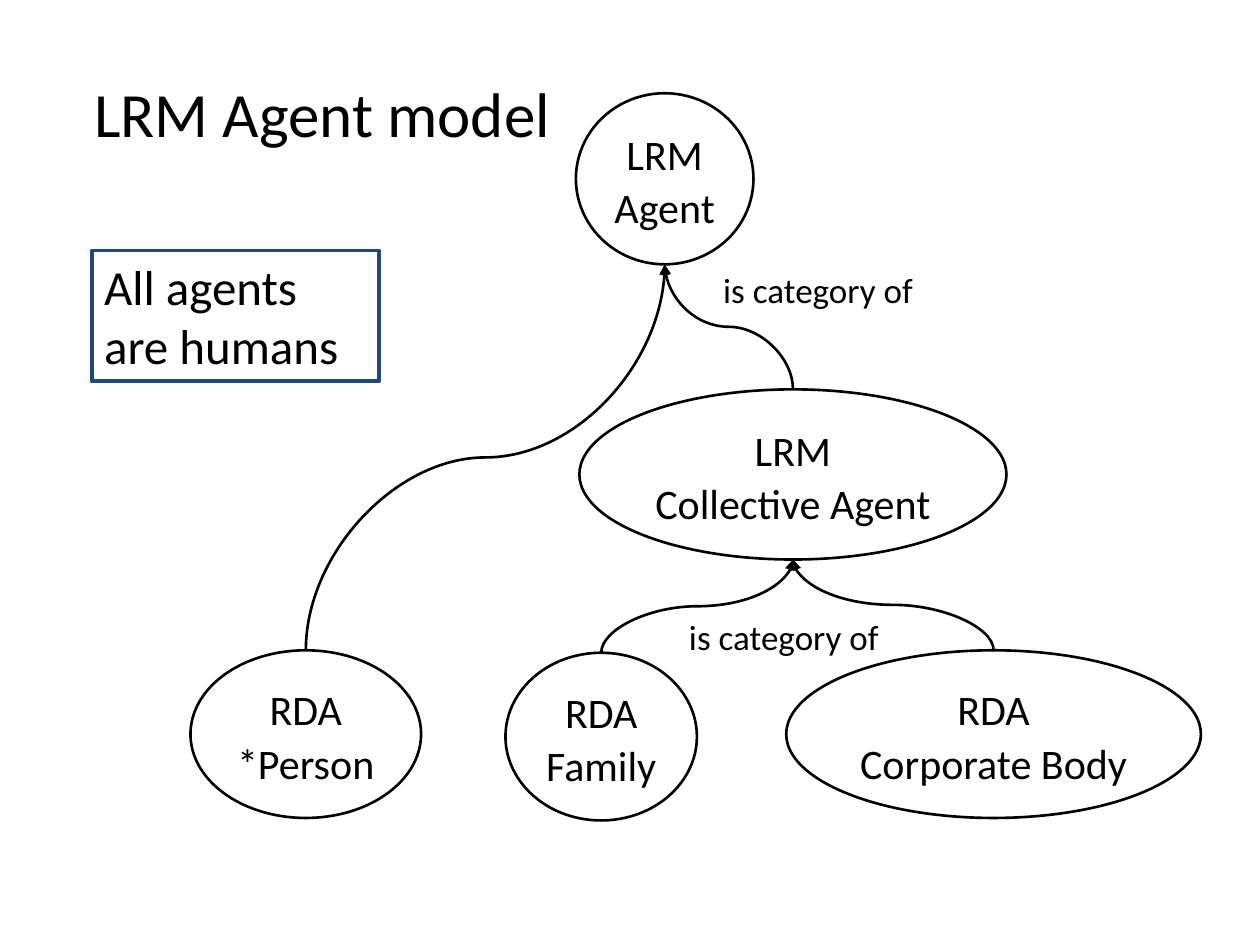
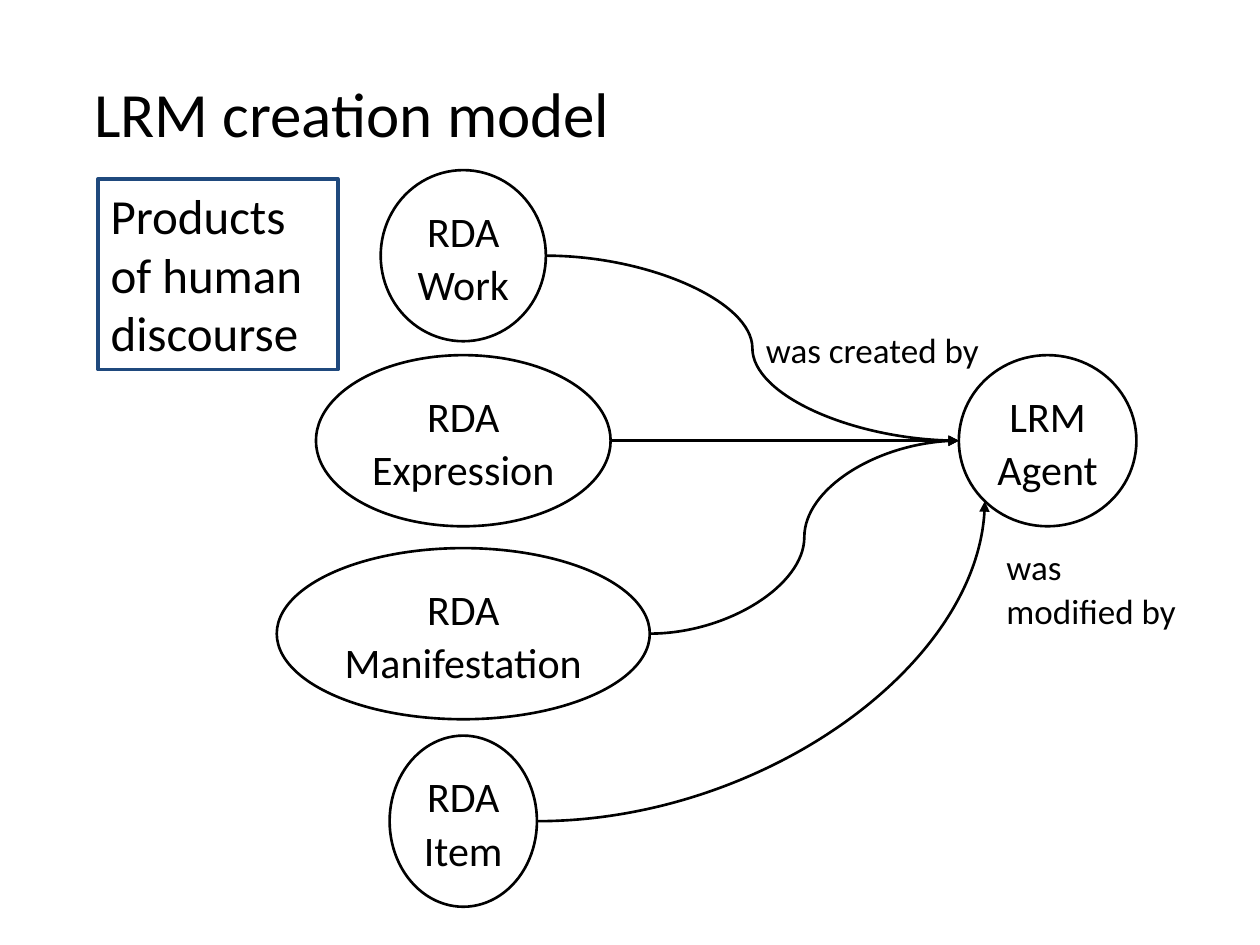
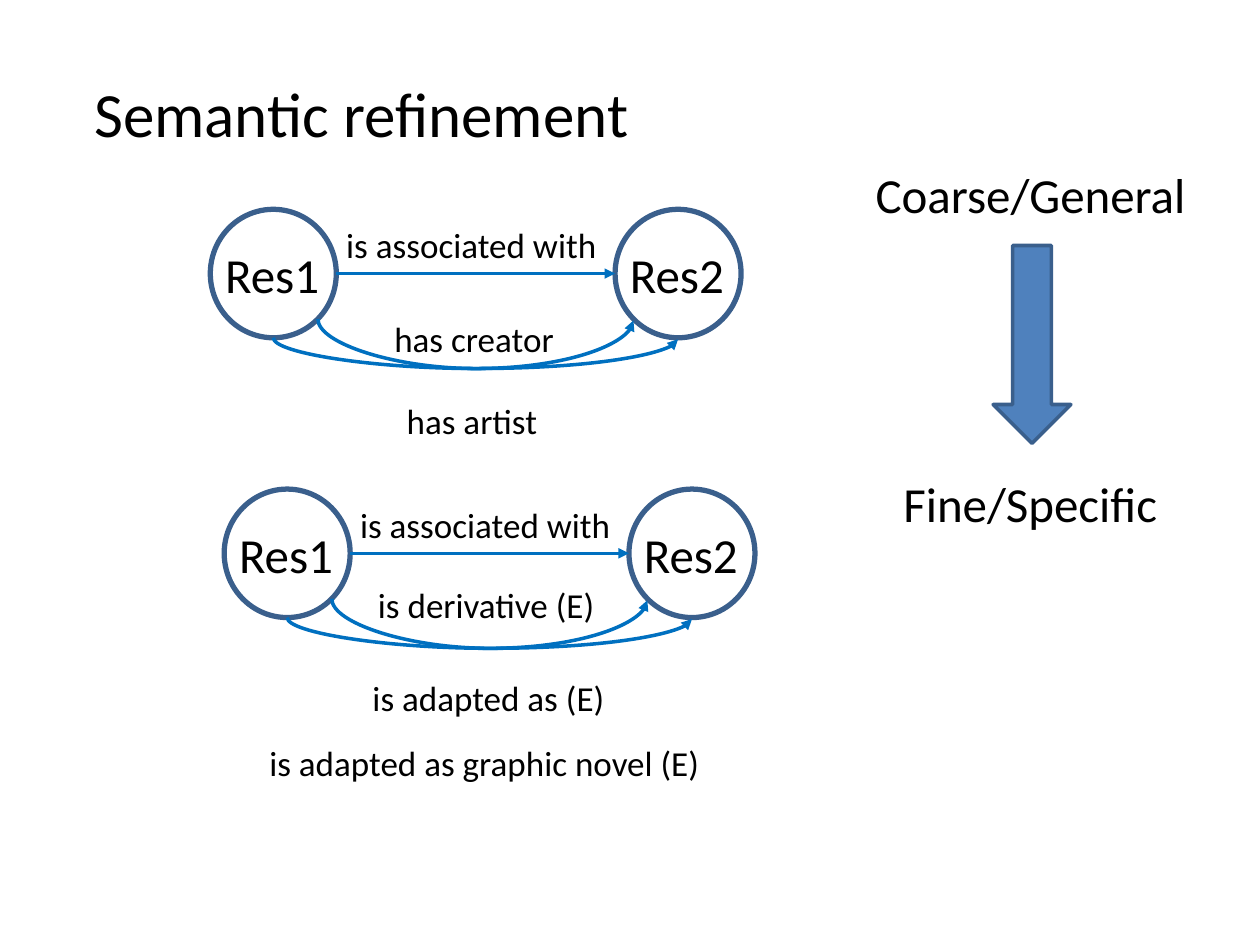
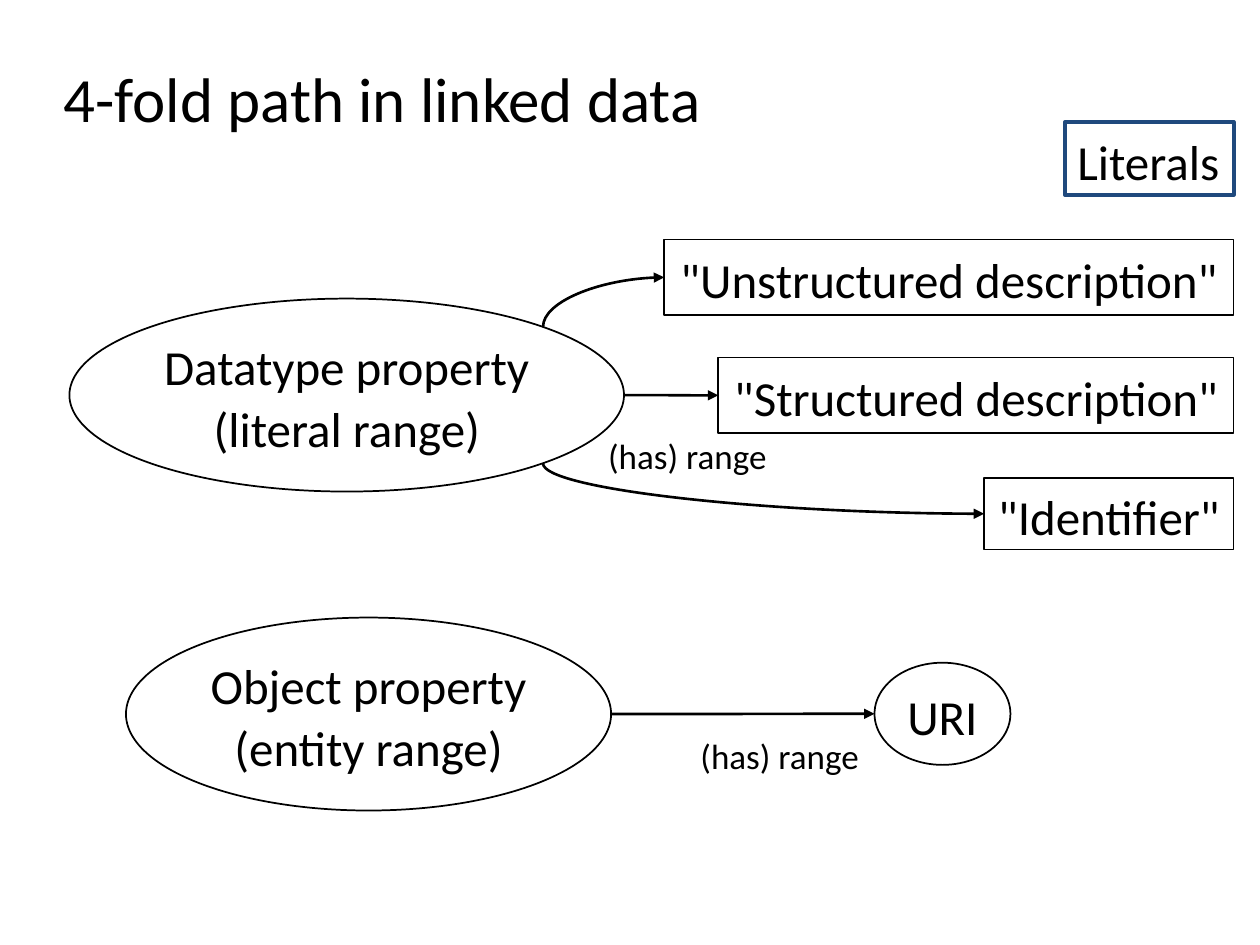
"""Build four diagram slides on agents, creation, refinement and linked data."""
from lxml.etree import SubElement
from pptx import Presentation
from pptx.dml.color import RGBColor
from pptx.enum.shapes import MSO_CONNECTOR as Line, MSO_SHAPE as Preset
from pptx.enum.text import MSO_ANCHOR as Anchor, MSO_AUTO_SIZE as AutoSize, PP_ALIGN as Align
from pptx.oxml.ns import qn
from pptx.util import Cm, Pt

COLORS = {"ink": "000000", "paper": "FFFFFF", "note": "1F497D",
          "ring": "3A5F8C", "link": "0070C0", "arrow": "4F81BD"}
FONT = "Calibri"
LEADING = 1.06
TITLE_AT = (1.65, 1.37)
TITLE_HEIGHT = 1.8
LABEL_SIZE = 20
SIDES = {"top": (0.5, 0), "left": (0, 0.5), "bottom": (0.5, 1), "right": (1, 0.5),
         "top right": (0.854, 0.146), "bottom left": (0.146, 0.854),
         "bottom right": (0.854, 0.854)}

AGENT_NODES = {
    "agent": ("LRM\nAgent", 11.61, 1.88, 3.58, 3.45),
    "collective": ("LRM\nCollective Agent", 11.68, 7.85, 8.61, 3.43),
    "person": ("RDA\n*Person", 3.84, 13.11, 4.65, 3.38),
    "family": ("RDA\nFamily", 10.19, 13.16, 3.86, 3.38),
    "corporate": ("RDA\nCorporate Body", 15.85, 13.11, 8.36, 3.38),
}
AGENT_LINKS = [
    ("collective", "top", "agent", "bottom"),
    ("corporate", "top", "collective", "bottom"),
    ("family", "top", "collective", "bottom"),
    ("person", "top", "agent", "bottom"),
]
AGENT_LABELS = [
    ("is category of", 13.64, 12.24, 4.37, 1.17),
    ("is category of", 14.33, 5.23, 4.37, 1.14),
]

PRODUCT_CENTER = 9.34
PRODUCTS = [("work", "RDA\nWork", 3.43, 3.33), ("expression", "RDA\nExpression", 7.16, 5.94),
            ("manifestation", "RDA\nManifestation", 11.05, 7.52), ("item", "RDA\nItem", 14.83, 2.97)]
CREATION_LINKS = [
    ("expression", "right", "agent", "left"),
    ("work", "right", "agent", "left"),
    ("manifestation", "right", "agent", "left"),
    ("item", "right", "agent", "bottom left"),
]
CREATION_LABELS = [
    ("was created by", 15.19, 6.45, 4.85, 1.14),
    ("was\nmodified by", 20.04, 10.82, 3.96, 2.06),
]

PAIRS = [(4.24, 4.22), (4.52, 9.86)]
RING_WIDTH, RING_HEIGHT, RING_STEP = 2.54, 2.59, 8.16
LOOP_DEPTH = 0.62
LOOP_DROP = 0.03
REFINEMENT_LABELS = [
    ("is associated with", 6.73, 4.39, 5.61, 1.12),
    ("has creator", 7.7, 6.27, 3.76, 1.12),
    ("has artist", 7.95, 7.92, 3.18, 1.12),
    ("is associated with", 7.01, 10.03, 5.61, 1.12),
    ("is derivative (E)", 7.37, 11.63, 4.93, 1.12),
    ("is adapted as (E)", 7.26, 13.51, 5.23, 1.12),
    ("is adapted as graphic novel (E)", 5.18, 14.83, 9.27, 1.12),
]
SCALE_LABELS = [
    ("Coarse/General", 17.4, 3.2, 6.83, 1.45),
    ("Fine/Specific", 17.96, 9.42, 5.69, 1.45),
]

PROPERTY_NODES = {
    "object": ("Object property\n(entity range)", 2.54, 12.45, 9.78, 3.89),
    "datatype": ("Datatype property\n(literal range)", 1.4, 6.02, 11.18, 3.89),
    "uri": ("URI", 17.63, 13.36, 2.74, 2.06),
}
LITERAL_RIGHT = 24.87
LITERALS = [("unstructured", '"Unstructured description"', 4.83, 11.48, 1.52),
            ("structured", '"Structured description"', 7.21, 10.39, 1.52),
            ("identifier", '"Identifier"', 9.63, 5.03, 1.45)]
PATH_LINKS = [
    ("datatype", "bottom right", "identifier", "left"),
    ("object", "right", "uri", "left"),
    ("datatype", "right", "structured", "left"),
    ("datatype", "top right", "unstructured", "left"),
]
PATH_LABELS = [
    ("(has) range", 13.87, 14.63, 3.73, 1.17),
    ("(has) range", 12.01, 8.59, 3.73, 1.17),
]


def color(name):
    return RGBColor.from_string(COLORS[name])


def write(box, text, size, align=Align.LEFT, leading=None, wrap=False):
    frame = box.text_frame
    frame.text = text
    frame.word_wrap = wrap
    frame.auto_size = AutoSize.SHAPE_TO_FIT_TEXT
    for para in frame.paragraphs:
        para.alignment = align
        para.line_spacing = leading
        para.font.name = FONT
        para.font.size = Pt(size)
        para.font.color.rgb = color("ink")


def add_label(shapes, label, size=LABEL_SIZE, leading=None):
    text, *place = label
    box = shapes.add_textbox(*map(Cm, place))
    write(box, text, size, leading=leading)


def add_outline(shapes, preset, place, line, width, fill=None):
    shape = shapes.add_shape(preset, *map(Cm, place))
    shape.shadow.inherit = False
    shape.line.color.rgb = color(line)
    shape.line.width = Pt(width)
    if fill:
        shape.fill.solid()
        shape.fill.fore_color.rgb = color(fill)
    else:
        shape.fill.background()
    return shape


def add_node(page, node, size=24, width=1.5, preset=Preset.OVAL):
    text, *place = node
    shape = add_outline(page.shapes, preset, place, "ink", width, "paper")
    shape.text_frame.vertical_anchor = Anchor.MIDDLE
    write(shape, text, size, Align.CENTER, LEADING)


def add_note(page, text, place, wrap=True, leading=None):
    shape = add_outline(page.shapes, Preset.RECTANGLE, place, "note", 2.25)
    shape.text_frame.vertical_anchor = Anchor.TOP
    write(shape, text, 28, wrap=wrap, leading=leading)


def site(place, side):
    left, top, width, height = place
    across, down = SIDES[side]
    return left + across * width, top + down * height


def is_upright(side):
    return side not in ("left", "right")


def add_link(page, nodes, link, line="ink", width=1.5, loop_bottom=None):
    """Draw a curved arrow that leaves and enters its nodes square to their sides."""
    source, source_side, target, target_side = link
    x1, y1 = site(nodes[source][1:], source_side)
    x2, y2 = site(nodes[target][1:], target_side)
    if loop_bottom:
        y2 += LOOP_DROP
    run, rise, turn = x2 - x1, y2 - y1, 0
    if is_upright(source_side):
        run, rise, turn = (rise, -run, 90) if rise > 0 else (-rise, run, 270)
    middle_x, middle_y = (x1 + x2) / 2, (y1 + y2) / 2
    ends = (middle_x - run / 2, middle_y - rise / 2, middle_x + run / 2, middle_y + rise / 2)
    connector = page.shapes.add_connector(Line.CURVE, *map(Cm, ends))
    connector.line.color.rgb = color(line)
    connector.line.width = Pt(width)
    props = connector._element.spPr
    if turn:
        props.find(qn("a:xfrm")).set("rot", str(turn * 60000))
    geometry = props.find(qn("a:prstGeom"))
    if is_upright(source_side) != is_upright(target_side):
        geometry.set("prst", "curvedConnector2")
    if loop_bottom:
        bend = round((loop_bottom - y1) / run * 100000)
        SubElement(geometry.find(qn("a:avLst")), qn("a:gd"), name="adj1", fmla=f"val {bend}")
    SubElement(props.find(qn("a:ln")), qn("a:tailEnd"), type="triangle")
    SubElement(props, qn("a:effectLst"))


def add_page(deck, title, width, at=TITLE_AT):
    page = deck.slides.add_slide(deck.slide_layouts[6])
    add_label(page.shapes, (title, *at, width, TITLE_HEIGHT), 36)
    return page


def build_agents(deck):
    page = add_page(deck, "LRM Agent model", 9.78)
    for node in AGENT_NODES.values():
        add_node(page, node)
    for link in AGENT_LINKS:
        add_link(page, AGENT_NODES, link)
    for label in AGENT_LABELS:
        add_label(page.shapes, label, leading=LEADING)
    add_note(page, "All agents are humans", (1.85, 5.05, 5.79, 2.64))


def build_creation(deck):
    page = add_page(deck, "LRM creation model", 11)
    nodes = {"agent": ("LRM\nAgent", 19.33, 7.16, 3.58, 3.45)}
    for name, text, top, width in PRODUCTS:
        nodes[name] = (text, PRODUCT_CENTER - width / 2, top, width, 3.45)
    for node in nodes.values():
        add_node(page, node)
    for link in CREATION_LINKS:
        add_link(page, nodes, link)
    for label in CREATION_LABELS:
        add_label(page.shapes, label, leading=LEADING)
    add_note(page, "Products of human discourse", (1.98, 3.61, 4.83, 3.84))


def build_refinement(deck):
    page = add_page(deck, "Semantic refinement", 11.38)
    for left, top in PAIRS:
        rings = {name: (name, left + index * RING_STEP, top, RING_WIDTH, RING_HEIGHT)
                 for index, name in enumerate(("Res1", "Res2"))}
        for name, *place in rings.values():
            group = page.shapes.add_group_shape()
            add_outline(group.shapes, Preset.OVAL, place, "ring", 3)
            add_label(group.shapes, (name, place[0] + 0.05, top + 0.58, 2.44, 1.45), 28)
        add_link(page, rings, ("Res1", "right", "Res2", "left"), "link", 2)
        for start, end in (("bottom right", "bottom left"), ("bottom", "bottom")):
            add_link(page, rings, ("Res1", start, "Res2", end), "link", 2,
                     top + RING_HEIGHT + LOOP_DEPTH)
    for label in REFINEMENT_LABELS:
        add_label(page.shapes, label)
    for label in SCALE_LABELS:
        add_label(page.shapes, label, 28)
    add_outline(page.shapes, Preset.DOWN_ARROW, (20.02, 4.95, 1.57, 3.99), "ring", 2, "arrow")


def build_paths(deck):
    page = add_page(deck, "4-fold path in linked data", 13.46, (1.04, 1.07))
    literals = {name: (text, LITERAL_RIGHT - width, top, width, height)
                for name, text, top, width, height in LITERALS}
    for node in PROPERTY_NODES.values():
        add_node(page, node, 28, 1)
    for node in literals.values():
        add_node(page, node, 28, 1, Preset.RECTANGLE)
    for link in PATH_LINKS:
        add_link(page, PROPERTY_NODES | literals, link)
    for label in PATH_LABELS:
        add_label(page.shapes, label, leading=LEADING)
    add_note(page, "Literals", (LITERAL_RIGHT - 3.4, 2.46, 3.4, 1.47), False, LEADING)


def main():
    deck = Presentation()
    deck.slide_width, deck.slide_height = Cm(25.4), Cm(19.05)
    for build in (build_agents, build_creation, build_refinement, build_paths):
        build(deck)
    deck.save("out.pptx")


if __name__ == "__main__":
    main()
